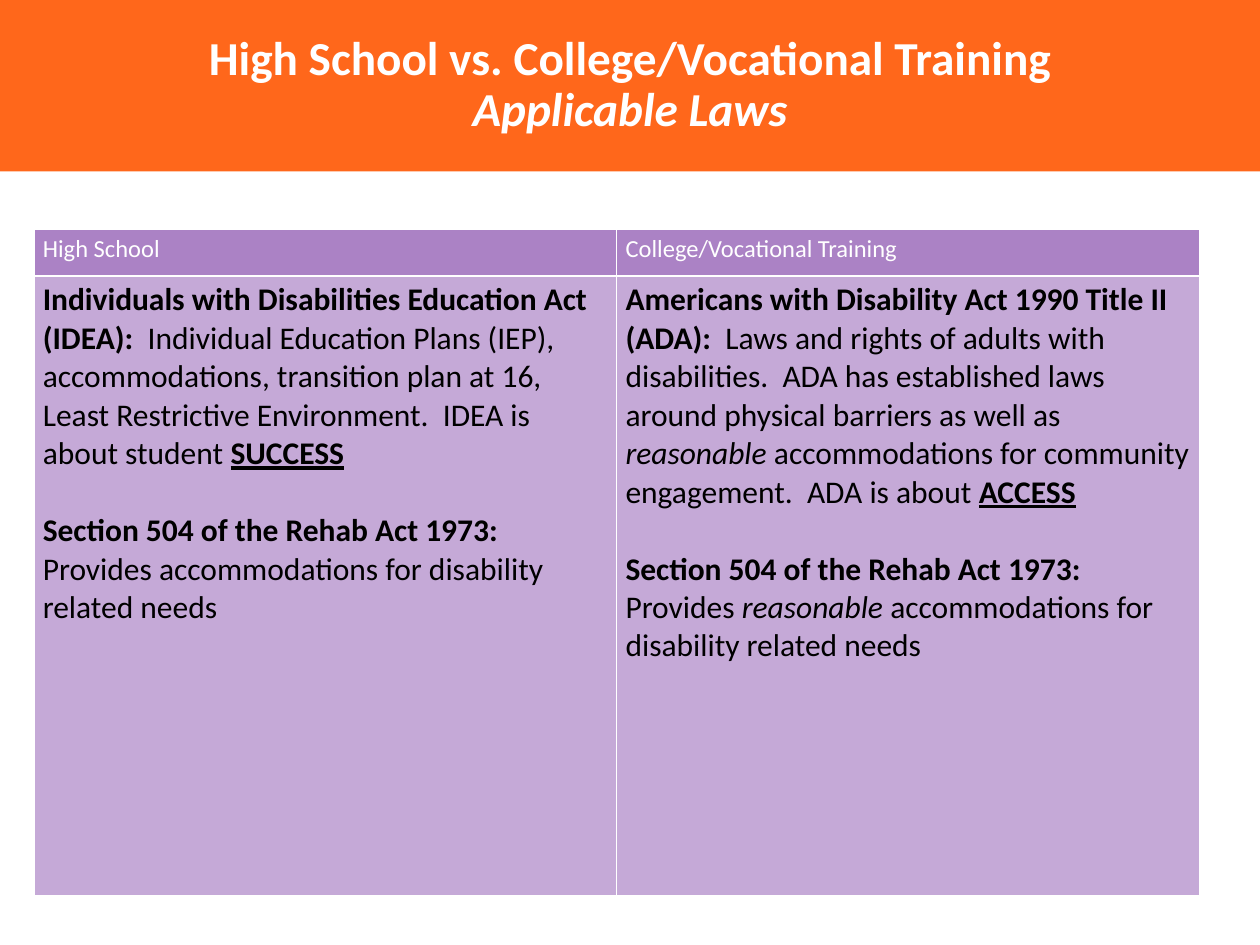
from dataclasses import dataclass

from lxml import etree
from pptx import Presentation
from pptx.dml.color import RGBColor
from pptx.enum.text import MSO_ANCHOR, MSO_AUTO_SIZE, PP_ALIGN
from pptx.oxml.ns import qn
from pptx.util import Inches, Pt

FONT = "Calibri"
ORANGE, WHITE, BLACK = "FF671B", "FFFFFF", "000000"
HEADER_FILL, BODY_FILL = "AB82C5", "C5A9D7"


@dataclass
class Span:
    text: str
    bold: bool = False
    italic: bool = False
    underline: bool = False


@dataclass
class Column:
    heading: str
    laws: list[list[Span]]


SECTION_504 = Span("Section 504 of the Rehab Act 1973: ", bold=True)
COLUMNS = [
    Column("High School", [
        [Span("Individuals with Disabilities Education Act (IDEA): ", bold=True),
         Span(" Individual Education Plans (IEP), accommodations, transition plan at 16, "
              "Least Restrictive Environment.  IDEA is about student "),
         Span("SUCCESS", bold=True, underline=True)],
        [SECTION_504,
         Span("Provides accommodations for disability related needs")],
    ]),
    Column("College/Vocational Training", [
        [Span("Americans with Disability Act 1990 Title II (ADA):", bold=True),
         Span("  Laws and rights of adults with disabilities.  ADA has established laws "
              "around physical barriers as well as "),
         Span("reasonable", italic=True),
         Span(" accommodations for community engagement.  ADA is about "),
         Span("ACCESS", bold=True, underline=True)],
        [SECTION_504,
         Span("Provides "),
         Span("reasonable", italic=True),
         Span(" accommodations for disability related needs")],
    ]),
]


def paint(fmt, color: str) -> None:
    if hasattr(fmt, "solid"):
        fmt.solid()
        fmt = fmt.fore_color
    fmt.rgb = RGBColor.from_string(color)


def style_run(r, size: float, color: str, bold=False, italic=False, underline=False) -> None:
    r.font.name = FONT
    r.font.size = Pt(size)
    r.font.bold = bold
    r.font.italic = italic
    r.font.underline = underline
    paint(r.font.color, color)


def style_cell(cell, fill: str) -> None:
    cell.margin_left = cell.margin_right = Inches(0.07)
    cell.margin_top = cell.margin_bottom = Inches(0.04)
    tcPr = cell._tc.get_or_add_tcPr()
    for side in ("lnL", "lnR", "lnT", "lnB"):
        ln = etree.SubElement(tcPr, qn(f"a:{side}"), w=str(Pt(1)))
        solid = etree.SubElement(ln, qn("a:solidFill"))
        etree.SubElement(solid, qn("a:srgbClr"), val=WHITE)
    paint(cell.fill, fill)


def add_title(s) -> None:
    title = s.shapes.title
    title.left, title.top = Inches(0), Inches(0)
    title.width, title.height = Inches(10), Inches(1.36)
    paint(title.fill, ORANGE)
    tf = title.text_frame
    tf.text = "High School vs. College/Vocational Training\vApplicable Laws"
    tf.auto_size = MSO_AUTO_SIZE.NONE
    tf.vertical_anchor = MSO_ANCHOR.MIDDLE
    p = tf.paragraphs[0]
    p.alignment = PP_ALIGN.CENTER
    p.line_spacing = 0.9
    for r, italic in zip(p.runs, (False, True)):
        style_run(r, 27, WHITE, bold=True, italic=italic)


def fill_laws(cell, laws: list[list[Span]]) -> None:
    tf = cell.text_frame
    for i, spans in enumerate(laws):
        p = tf.add_paragraph() if i else tf.paragraphs[0]
        p.space_before = Pt(22 if i else 0)
        for span in spans:
            r = p.add_run()
            r.text = span.text
            style_run(r, 18, BLACK, span.bold, span.italic, span.underline)


def add_laws_table(s, columns: list[Column]) -> None:
    frame = s.shapes.add_table(2, len(columns), Inches(0.27), Inches(1.82),
                               Inches(9.25), Inches(5.29))
    table = frame.table
    table.first_row = table.horz_banding = False
    table.rows[0].height = Inches(0.37)
    table.rows[1].height = Inches(4.92)
    for i, column in enumerate(columns):
        head, body = table.cell(0, i), table.cell(1, i)
        style_cell(head, HEADER_FILL)
        style_cell(body, BODY_FILL)
        head.text_frame.text = column.heading
        style_run(head.text_frame.paragraphs[0].runs[0], 14, WHITE)
        fill_laws(body, column.laws)


def main() -> None:
    prs = Presentation()
    prs.slide_width, prs.slide_height = Inches(10), Inches(7.5)
    s = prs.slides.add_slide(prs.slide_layouts[5])
    add_title(s)
    add_laws_table(s, COLUMNS)
    prs.save("out.pptx")


if __name__ == "__main__":
    main()
